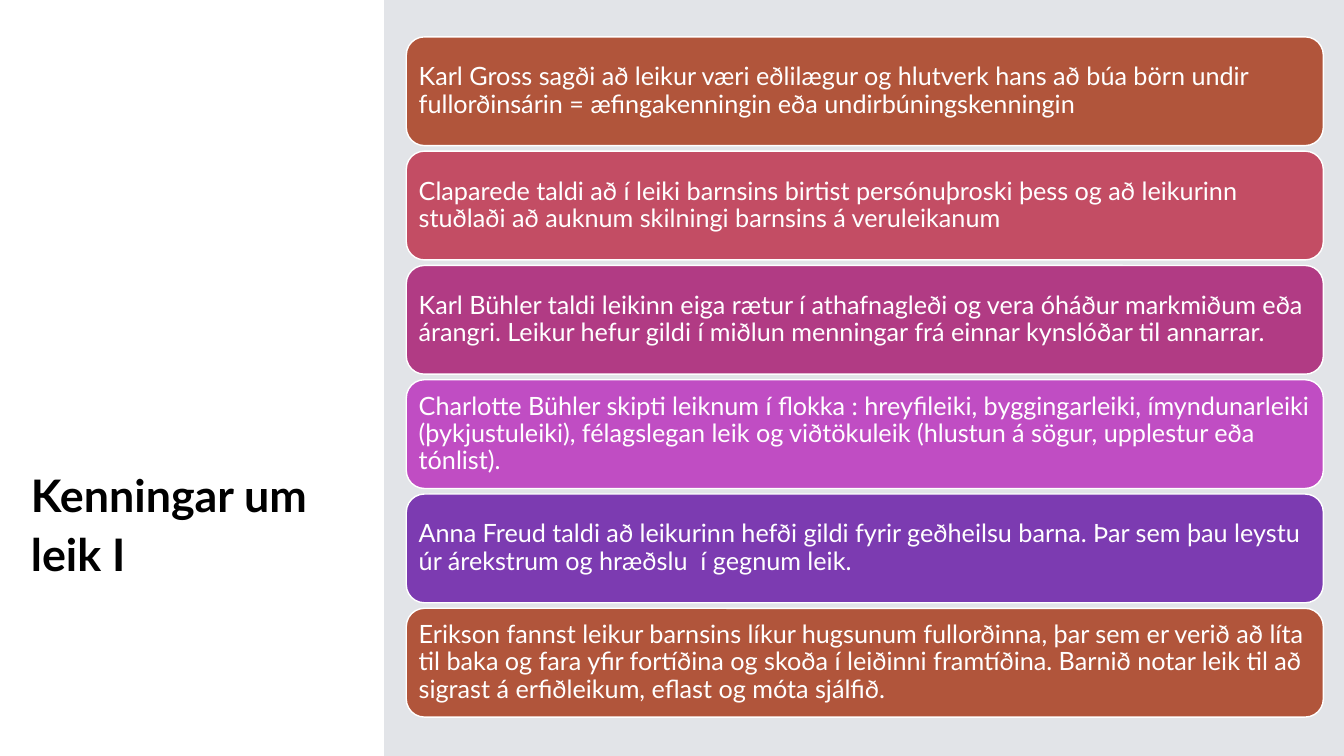
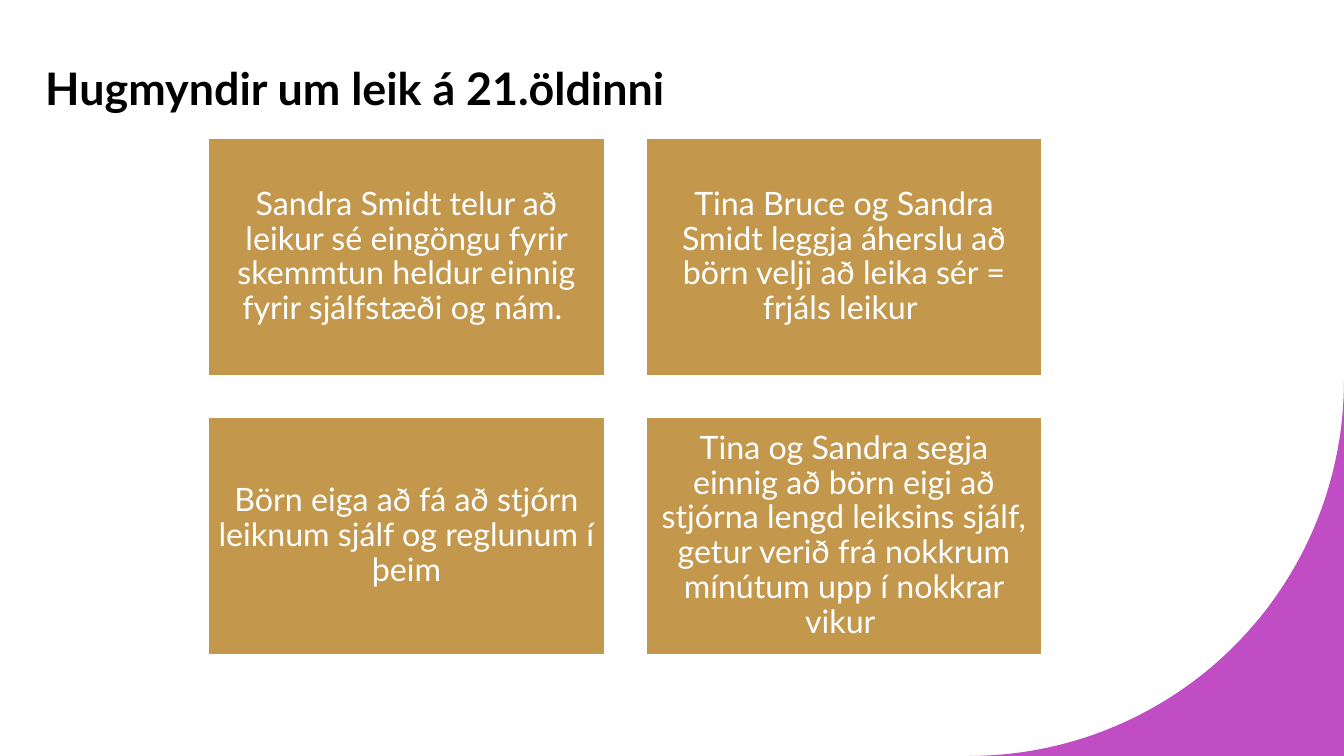
import math
from dataclasses import dataclass

from pptx import Presentation
from pptx.dml.color import RGBColor
from pptx.enum.shapes import MSO_SHAPE
from pptx.enum.text import MSO_ANCHOR, PP_ALIGN
from pptx.util import Cm, Pt

RECTANGLE, ROUNDED = MSO_SHAPE.RECTANGLE, MSO_SHAPE.ROUNDED_RECTANGLE
MIDDLE, BOTTOM = MSO_ANCHOR.MIDDLE, MSO_ANCHOR.BOTTOM
LEFT, CENTER = PP_ALIGN.LEFT, PP_ALIGN.CENTER

FONT = "Lato"
COLORS = {
    "white": "FFFFFF",
    "black": "000000",
    "panel": "E2E4E8",
    "rust": "B1553B",
    "rose": "C34D64",
    "magenta": "B13B84",
    "orchid": "C04DC3",
    "violet": "7C3BB1",
    "gold": "C3984D",
}
SLIDE_WIDTH, SLIDE_HEIGHT = 33.87, 19.05
BLANK_LAYOUT = 6

THEORIES = [
    ("rust", "Karl Gross sagði að leikur væri eðlilægur og hlutverk hans að búa börn undir "
             "fullorðinsárin = æfingakenningin eða undirbúningskenningin"),
    ("rose", "Claparede taldi að í leiki barnsins birtist persónuþroski þess og að leikurinn "
             "stuðlaði að auknum skilningi barnsins á veruleikanum"),
    ("magenta", "Karl Bühler taldi leikinn eiga rætur í athafnagleði og vera óháður markmiðum "
                "eða árangri. Leikur hefur gildi í miðlun menningar frá einnar kynslóðar til "
                "annarrar."),
    ("orchid", "Charlotte Bühler skipti leiknum í flokka : hreyfileiki, byggingarleiki, "
               "ímyndunarleiki (þykjustuleiki), félagslegan leik og viðtökuleik (hlustun á "
               "sögur, upplestur eða tónlist)."),
    ("violet", "Anna Freud taldi að leikurinn hefði gildi fyrir geðheilsu barna. Þar sem þau "
               "leystu úr árekstrum og hræðslu  í gegnum leik."),
    ("rust", "Erikson fannst leikur barnsins líkur hugsunum fullorðinna, þar sem er verið að "
             "líta til baka og fara yfir fortíðina og skoða í leiðinni framtíðina. Barnið "
             "notar leik til að sigrast á erfiðleikum, eflast og móta sjálfið."),
]
IDEAS = [
    "Sandra Smidt telur að leikur sé eingöngu fyrir skemmtun heldur einnig fyrir "
    "sjálfstæði og nám. ",
    "Tina Bruce og Sandra Smidt leggja áherslu að börn velji að leika sér = frjáls leikur ",
    "Börn eiga að fá að stjórn leiknum sjálf og reglunum í þeim",
    "Tina og Sandra segja einnig að börn eigi að stjórna lengd leiksins sjálf, getur verið "
    "frá nokkrum mínútum upp í nokkrar vikur ",
]


@dataclass
class Box:
    """A region of the slide, in centimetres."""
    left: float
    top: float
    width: float
    height: float

    def lengths(self):
        return Cm(self.left), Cm(self.top), Cm(self.width), Cm(self.height)

    def cells(self, columns, rows, gap):
        """Yield equal cells row by row, with the same gap both ways."""
        width = (self.width - gap * (columns - 1)) / columns
        height = (self.height - gap * (rows - 1)) / rows
        for row in range(rows):
            for column in range(columns):
                yield Box(self.left + column * (width + gap),
                          self.top + row * (height + gap), width, height)


def rgb(name):
    return RGBColor.from_string(COLORS[name])


def paint(shape, fill, line=None):
    shape.shadow.inherit = False
    shape.fill.solid()
    shape.fill.fore_color.rgb = rgb(fill)
    if line:
        shape.line.color.rgb = rgb(line)
        shape.line.width = Pt(1)
    else:
        shape.line.fill.background()


def write(shape, lines, size, color, anchor, align=LEFT, spacing=0.9, bold=False):
    frame = shape.text_frame
    frame.word_wrap = True
    frame.vertical_anchor = anchor
    paragraph = frame.paragraphs[0]
    paragraph.alignment = align
    paragraph.line_spacing = spacing
    for index, line in enumerate(lines):
        if index:
            paragraph.add_line_break()
        run = paragraph.add_run()
        run.text = line
        run.font.name = FONT
        run.font.size = Pt(size)
        run.font.bold = bold
        run.font.color.rgb = rgb(color)


def set_insets(shape, inset):
    frame = shape.text_frame
    frame.margin_left = frame.margin_right = Cm(inset)
    frame.margin_top = frame.margin_bottom = Cm(inset)


def add_title(slide, box, *lines):
    title = slide.shapes.add_textbox(*box.lengths())
    write(title, lines, 32, "black", BOTTOM, spacing=1.1, bold=True)


def add_card(slide, box, kind, fill, text, size, inset, align):
    card = slide.shapes.add_shape(kind, *box.lengths())
    paint(card, fill, "white")
    set_insets(card, inset)
    write(card, [text], size, "white", MIDDLE, align)


def add_theory_panel(slide, box):
    panel = slide.shapes.add_shape(RECTANGLE, *box.lengths())
    paint(panel, "panel")
    stack = Box(box.left + 0.56, box.top + 0.93, 23.11, 17.14)
    for cell, (fill, text) in zip(stack.cells(1, len(THEORIES), 0.14), THEORIES):
        add_card(slide, cell, ROUNDED, fill, text, 18, 0.18, LEFT)


def add_idea_grid(slide, box):
    for cell, text in zip(box.cells(2, 2, 1.05), IDEAS):
        add_card(slide, cell, RECTANGLE, "gold", text, 23, 0.23, CENTER)


def add_corner(slide, box, steps=90):
    """Fill the part of the box that lies outside a quarter ellipse."""
    arc = []
    for step in range(steps + 1):
        angle = math.pi / 2 * step / steps
        arc.append((Cm(box.left + box.width * math.cos(angle)),
                    Cm(box.top + box.height * math.sin(angle))))
    builder = slide.shapes.build_freeform(*arc[0])
    corner = (Cm(box.left + box.width), Cm(box.top + box.height))
    builder.add_line_segments(arc[1:] + [corner], close=True)
    paint(builder.convert_to_shape(), "orchid")


def build_theories_slide(slide):
    add_title(slide, Box(0.53, 5.84, 8.15, 8.92), "Kenningar um ", "leik I")
    add_theory_panel(slide, Box(9.68, 0, SLIDE_WIDTH - 9.68, SLIDE_HEIGHT))


def build_ideas_slide(slide):
    side = 9.45
    add_corner(slide, Box(SLIDE_WIDTH - side, SLIDE_HEIGHT - side, side, side))
    add_title(slide, Box(0.89, 0.84, 27.64, 2.18), "Hugmyndir um leik á 21.öldinni")
    add_idea_grid(slide, Box(5.26, 3.49, 21, 13))


def main():
    presentation = Presentation()
    presentation.slide_width = Cm(SLIDE_WIDTH)
    presentation.slide_height = Cm(SLIDE_HEIGHT)
    for build in (build_theories_slide, build_ideas_slide):
        build(presentation.slides.add_slide(presentation.slide_layouts[BLANK_LAYOUT]))
    presentation.save("out.pptx")


if __name__ == "__main__":
    main()
